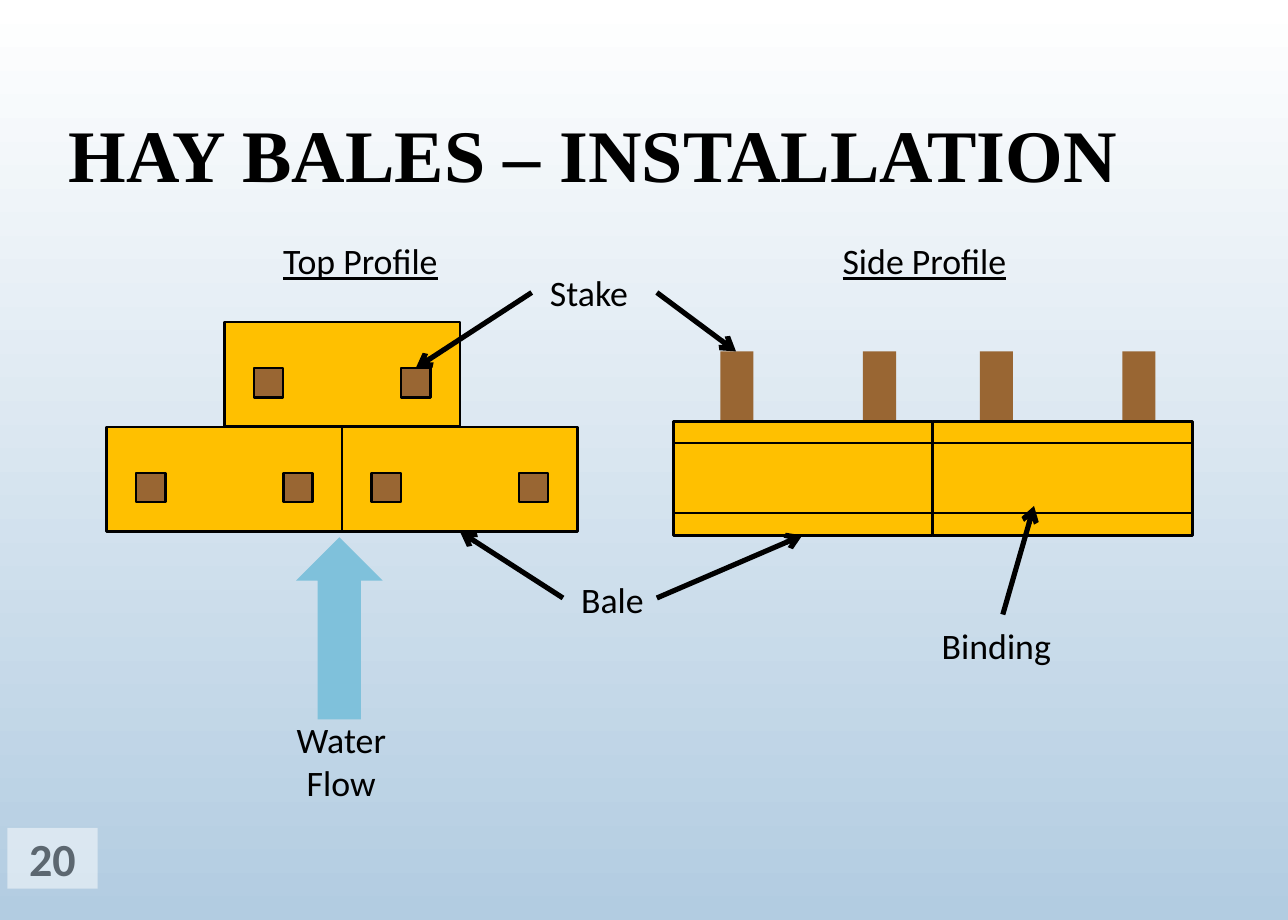
"""Build the hay bale installation slide on a grid of 70 columns by 50 rows."""
from lxml import etree
from pptx import Presentation
from pptx.dml.color import RGBColor
from pptx.enum.shapes import MSO_CONNECTOR, MSO_SHAPE
from pptx.enum.text import MSO_ANCHOR, PP_ALIGN
from pptx.oxml.ns import qn
from pptx.util import Inches, Pt

RECTANGLE, UP_ARROW = MSO_SHAPE.RECTANGLE, MSO_SHAPE.UP_ARROW
STRAIGHT = MSO_CONNECTOR.STRAIGHT
LEFT, CENTER = PP_ALIGN.LEFT, PP_ALIGN.CENTER
TOP, MIDDLE = MSO_ANCHOR.TOP, MSO_ANCHOR.MIDDLE
WIDTH, HEIGHT = Inches(7), Inches(5)
BLACK, HAY, WOOD, WATER = "000000", "FFC000", "996633", "7FC1DB"
WHITE, SKY, GREY = "FFFFFF", "B2CCE1", "5C6770"


def color(hex_text):
    """Turn a hex string into a colour."""
    return RGBColor.from_string(hex_text)


def grid(columns, rows):
    """Turn columns and rows into slide lengths."""
    return round(columns * WIDTH / 70), round(rows * HEIGHT / 50)


def paint_background(page):
    """Fade the page from white at the top to blue at the bottom."""
    fill = page.background.fill
    fill.gradient()
    fill.gradient_angle = 270
    for stop, shade in zip(fill.gradient_stops, (WHITE, SKY)):
        stop.color.rgb = color(shade)


def add_block(page, left, top, width, height, shade, outlined=False, kind=RECTANGLE):
    """Add a filled shape, with a thin black outline if asked."""
    block = page.shapes.add_shape(kind, *grid(left, top), *grid(width, height))
    block.shadow.inherit = False
    block.fill.solid()
    block.fill.fore_color.rgb = color(shade)
    if outlined:
        block.line.color.rgb = color(BLACK)
        block.line.width = Pt(1)
    else:
        block.line.fill.background()
    return block


def add_line(page, start, end, weight, arrow=False):
    """Add a black line, with an open arrowhead at its end if asked."""
    line = page.shapes.add_connector(STRAIGHT, *grid(*start), *grid(*end))
    line.line.color.rgb = color(BLACK)
    line.line.width = Pt(weight)
    if arrow:
        etree.SubElement(line.line._get_or_add_ln(), qn("a:tailEnd"), type="arrow")
    etree.SubElement(line._element.spPr, qn("a:effectLst"))


def write(box, lines, size=14, shade=BLACK, font="Calibri", align=CENTER,
          anchor=TOP, bold=False, underline=False):
    """Write one paragraph for each line into a box."""
    frame = box.text_frame
    frame.word_wrap = True
    frame.vertical_anchor = anchor
    for index, line in enumerate(lines):
        para = frame.add_paragraph() if index else frame.paragraphs[0]
        para.alignment = align
        run = para.add_run()
        run.text = line
        run.font.name = font
        run.font.size = Pt(size)
        run.font.bold = bold
        run.font.underline = underline
        run.font.color.rgb = color(shade)


def add_label(page, left, top, width, height, lines, **style):
    """Add a text box at a place on the grid."""
    box = page.shapes.add_textbox(*grid(left, top), *grid(width, height))
    write(box, lines, **style)


def draw_top_profile(page):
    """Draw three staggered bales from above, each with two stakes."""
    for left, top in ((5.8, 23.2), (18.6, 23.2), (12.2, 17.5)):
        add_block(page, left, top, 12.8, 5.7, HAY, outlined=True)
        for offset in (1.6, 9.6):
            add_block(page, left + offset, top + 2.5, 1.6, 1.6, WOOD, outlined=True)
    add_block(page, 16.1, 29.2, 4.7, 9.9, WATER, kind=UP_ARROW)


def draw_side_profile(page):
    """Draw two bales from the side with their stakes and bindings."""
    for left in (36.6, 50.7):
        for offset in (2.55, 10.3):
            add_block(page, left + offset, 19.1, 1.8, 4.3, WOOD)
        add_block(page, left, 22.9, 14.1, 6.2, HAY, outlined=True)
    for row in (24.1, 27.9):
        add_line(page, (36.6, row), (64.8, row), 0.75)


def add_labels(page):
    """Add the captions and the arrows that point from them."""
    add_label(page, 11, 38.5, 15.1, 5.7, ["Water", "Flow"])
    add_label(page, 13.8, 12.5, 11.6, 3.4, ["Top Profile"], underline=True)
    add_label(page, 43.4, 12.5, 13.7, 3.4, ["Side Profile"], underline=True)
    for left, top, width, name in ((28.9, 14.2, 8.5, "Stake"),
                                   (30.6, 30.9, 6.8, "Bale"),
                                   (50.2, 33.4, 12, "Binding")):
        add_label(page, left, top, width, 3.4, [name], align=LEFT)
    for start, end in (((35.7, 15.9), (40, 19.1)),
                       ((28.9, 15.9), (22.6, 20)),
                       ((30.6, 32.5), (25, 28.9)),
                       ((35.7, 32.5), (43.6, 29.1)),
                       ((54.5, 33.4), (56.2, 27.5))):
        add_line(page, start, end, 2, arrow=True)


def add_page_number(page):
    """Add the page number on a half-transparent white block."""
    block = add_block(page, 0.4, 45, 4.9, 3.3, WHITE)
    shade = block.fill._xPr.find(qn("a:solidFill"))[0]
    etree.SubElement(shade, qn("a:alpha"), val="50000")
    block.text_frame.margin_left = block.text_frame.margin_right = 0
    write(block, ["20"], size=18, shade=GREY, anchor=MIDDLE, bold=True)


def main():
    """Build and save the deck."""
    deck = Presentation()
    deck.slide_width, deck.slide_height = WIDTH, HEIGHT
    page = deck.slides.add_slide(deck.slide_layouts[6])
    paint_background(page)
    add_label(page, 2.5, 2.5, 60 - 0.5, 11.6, ["HAY BALES – INSTALLATION"], size=29,
              font="Times New Roman", anchor=MIDDLE, bold=True)
    draw_top_profile(page)
    draw_side_profile(page)
    add_labels(page)
    add_page_number(page)
    deck.save("out.pptx")


if __name__ == "__main__":
    main()
